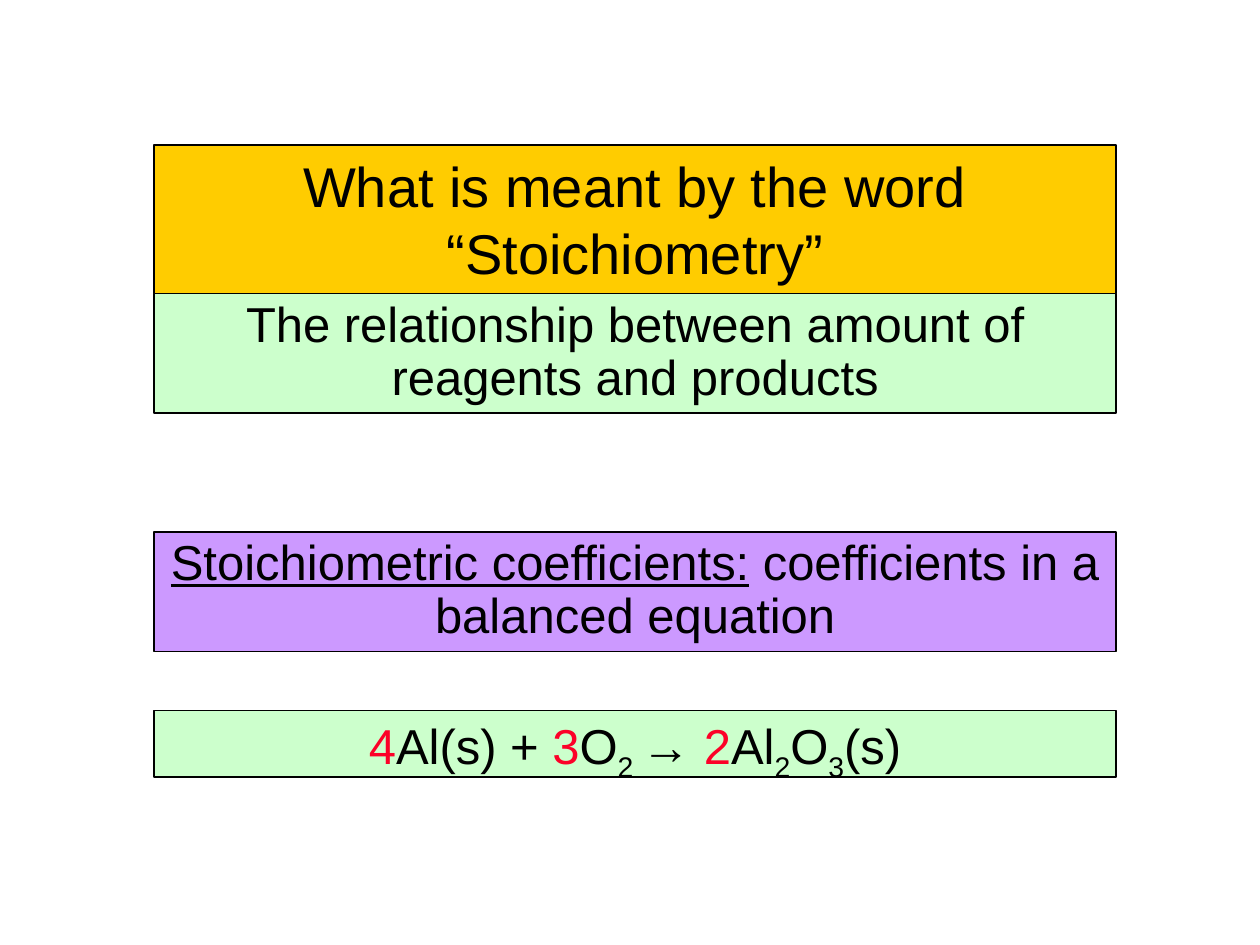
from lxml import etree
from pptx import Presentation
from pptx.dml.color import RGBColor
from pptx.enum import shapes, text
from pptx.oxml.ns import qn
from pptx.util import Pt

PX = 9144  # EMU per px, 100 px to the inch
WIDE, HIGH = 1000, 750
LEFT, WIDTH = 122, 764

BLACK = RGBColor(0x00, 0x00, 0x00)
RED = RGBColor(0xFC, 0x01, 0x28)
GOLD = RGBColor(0xFF, 0xCC, 0x00)
GREEN = RGBColor(0xCC, 0xFF, 0xCC)
VIOLET = RGBColor(0xCC, 0x99, 0xFF)

# Run styles
PLAIN, COEF, SUB, UNDER = "plain", "coef", "sub", "under"

# Content: top, height, fill, font size, line spacing, gaps in %, runs
BOXES = [
    (422, 95, VIOLET, 28, 0.9, {"spcBef": 30},
     [("Stoichiometric coefficients:", UNDER),
      (" coefficients in a balanced equation", PLAIN)]),
    (115, 118, GOLD, 32, None, {"spcBef": 50},
     [("What is meant by the word “Stoichiometry”", PLAIN)]),
    (233, 95, GREEN, 28, 0.9, {"spcBef": 30},
     [("The relationship between amount of reagents and products", PLAIN)]),
    (564, 53, GREEN, 28, 0.9, {"spcBef": 30, "spcAft": 30},
     [("4", COEF), ("Al(s) + ", PLAIN), ("3", COEF), ("O", PLAIN),
      ("2 ", SUB), ("→ ", PLAIN), ("2", COEF), ("Al", PLAIN),
      ("2", SUB), ("O", PLAIN), ("3", SUB), ("(s)", PLAIN)]),
]


def set_gaps(par, gaps):
    """Paragraph gaps as a share of the line, which need XML."""
    par.space_before = par.space_after = Pt(0)
    for tag, share in gaps.items():
        gap = par._p.pPr.find(qn("a:" + tag))
        gap.clear()
        etree.SubElement(gap, qn("a:spcPct")).set("val", str(share * 1000))


def add_run(par, words, style, size):
    run = par.add_run()
    run.text = words
    look = {"name": "Arial", "size": Pt(size), "underline": style == UNDER}
    for key, value in look.items():
        setattr(run.font, key, value)
    run.font.color.rgb = RED if style == COEF else BLACK
    if style == SUB:
        run.font._element.set("baseline", "-25000")


def add_box(slide, top, height, fill, size, lines, gaps, runs):
    place = [n * PX for n in (LEFT, top, WIDTH, height)]
    box = slide.shapes.add_shape(shapes.MSO_SHAPE.RECTANGLE, *place)
    box.shadow.inherit = False
    box.fill.solid()
    box.fill.fore_color.rgb = fill
    box.line.color.rgb = BLACK
    box.line.width = Pt(1)

    frame = box.text_frame
    form = {"word_wrap": True, "vertical_anchor": text.MSO_ANCHOR.TOP,
            "auto_size": text.MSO_AUTO_SIZE.SHAPE_TO_FIT_TEXT}
    for key, value in form.items():
        setattr(frame, key, value)

    par = frame.paragraphs[0]
    par.alignment = text.PP_ALIGN.CENTER
    par.line_spacing = lines
    set_gaps(par, gaps)
    for words, style in runs:
        add_run(par, words, style, size)


def main():
    deck = Presentation()
    deck.slide_width, deck.slide_height = WIDE * PX, HIGH * PX
    slide = deck.slides.add_slide(deck.slide_layouts[6])
    for box in BOXES:
        add_box(slide, *box)
    deck.save("out.pptx")


if __name__ == "__main__":
    main()
